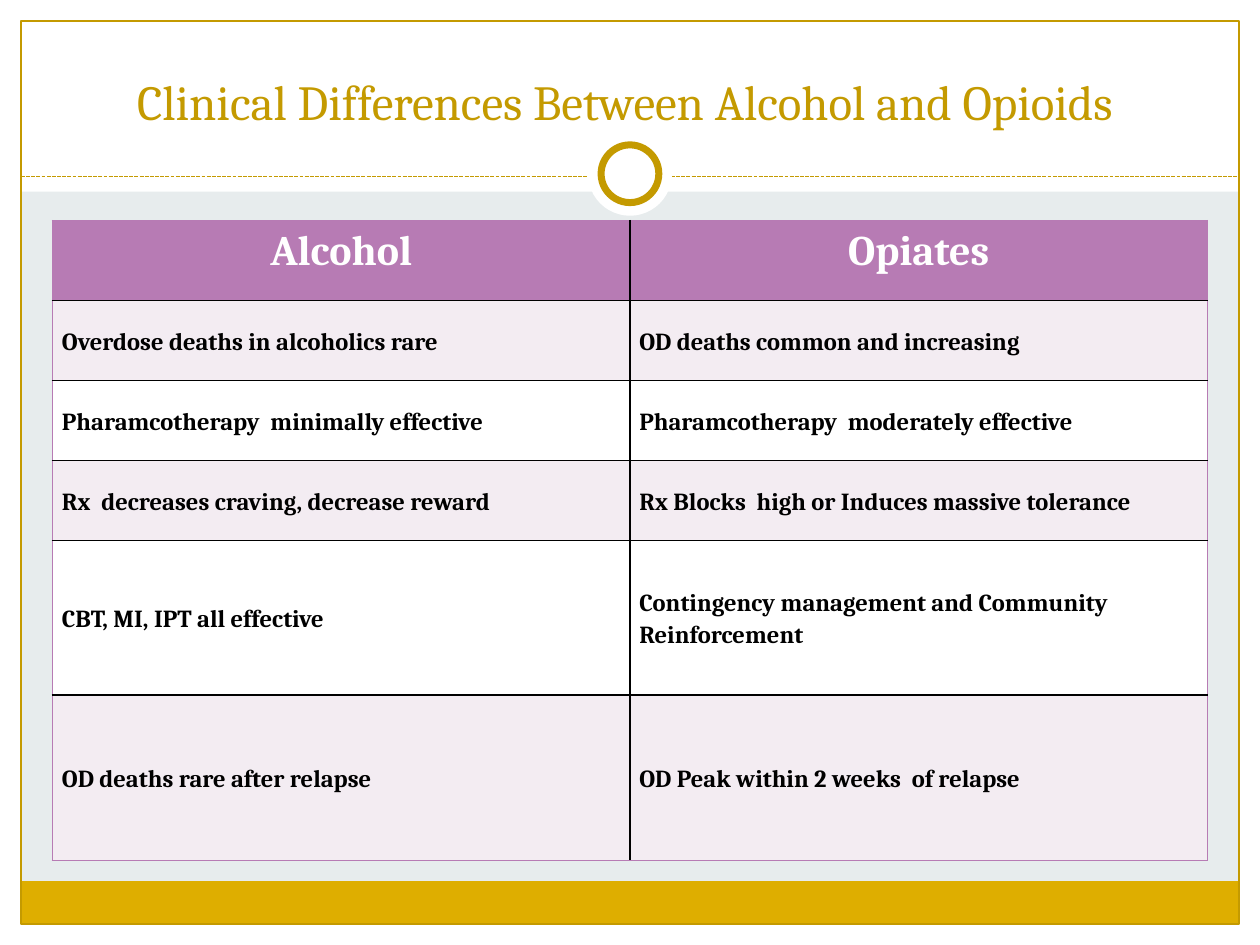
import pptx
import pptx.util
import pptx.dml.color
import pptx.enum.dml
import pptx.enum.shapes
import pptx.enum.text
import pptx.oxml
import pptx.oxml.ns
from dataclasses import dataclass

Pt = pptx.util.Pt
Shape = pptx.enum.shapes.MSO_SHAPE
Align = pptx.enum.text.PP_ALIGN
Anchor = pptx.enum.text.MSO_ANCHOR

# Content
TITLE = "Clinical Differences Between Alcohol and Opioids"
HEADS = ("Alcohol", "Opiates")
ROWS = [
    ("Overdose deaths in alcoholics rare", "OD deaths common and increasing"),
    ("Pharamcotherapy  minimally effective", "Pharamcotherapy  moderately effective"),
    ("Rx  decreases craving, decrease reward",
     "Rx Blocks  high or Induces massive tolerance"),
    ("CBT, MI, IPT all effective",
     "Contingency management and Community Reinforcement"),
    ("OD deaths rare after relapse", "OD Peak within 2 weeks  of relapse"),
]


# Theme
@dataclass(frozen=True)
class Theme:
    font: str = "Cambria"
    back: str = "E7ECED"
    white: str = "FFFFFF"
    black: str = "000000"
    gold: str = "C49A00"
    foot: str = "DEAE00"
    plum: str = "B77BB4"
    pale: str = "F3ECF2"
    title: int = 28
    head: int = 24
    body: int = 14


T = Theme()

# Layout, in points
WIDE, HIGH = 720, 540
EDGE = 12
BAND = 109.5
RULE = 100.8
FOOT = 24.5
RING = (343.5, 82.8, 33)
HALO = 7.5
GRID = (30, 126, 660)
HEIGHTS = [45.72] * 4 + [88.4, 94.5]


def rgb(code):
    return pptx.dml.color.RGBColor.from_string(code)


def write(frame, words, size=T.body, color=T.black, bold=False,
          align=Align.LEFT, space=None):
    frame.word_wrap = True
    para = frame.paragraphs[0]
    para.alignment = align
    para.line_spacing = space
    run = para.add_run()
    run.text = words
    font = run.font
    font.name, font.size, font.bold = T.font, Pt(size), bold
    font.color.rgb = rgb(color)


def draw(slide, kind, box, fill=None, line=None, width=0.75):
    part = slide.shapes.add_shape(kind, *map(Pt, box))
    part.shadow.inherit = False
    if fill:
        part.fill.solid()
        part.fill.fore_color.rgb = rgb(fill)
    else:
        part.fill.background()
    if line:
        part.line.color.rgb = rgb(line)
        part.line.width = Pt(width)
    else:
        part.line.fill.background()


def border(cell, sides):
    props = cell._tc.get_or_add_tcPr()
    space = pptx.oxml.ns.nsdecls("a")
    for spot, (side, color) in enumerate(sides.items()):
        props.insert(spot, pptx.oxml.parse_xml(
            f'<a:ln{side} {space} w="12700"><a:solidFill>'
            f'<a:srgbClr val="{color}"/></a:solidFill></a:ln{side}>'))


def frame(slide):
    # White margins, foot band and outline
    for box in ((0, HIGH - EDGE, WIDE, EDGE), (0, 0, WIDE, BAND),
                (0, 0, EDGE, HIGH), (WIDE - EDGE, 0, EDGE, HIGH)):
        draw(slide, Shape.RECTANGLE, box, T.white)
    inner = WIDE - 2 * EDGE
    draw(slide, Shape.RECTANGLE, (EDGE, HIGH - EDGE - FOOT, inner, FOOT), T.foot)
    draw(slide, Shape.RECTANGLE, (EDGE, EDGE, inner, HIGH - 2 * EDGE), line=T.gold)

    # Dashed rule
    rule = slide.shapes.add_connector(
        pptx.enum.shapes.MSO_CONNECTOR.STRAIGHT,
        Pt(EDGE), Pt(RULE), Pt(WIDE - EDGE), Pt(RULE))
    rule.line.color.rgb = rgb(T.gold)
    rule.line.width = Pt(0.75)
    rule.line.dash_style = pptx.enum.dml.MSO_LINE.SQUARE_DOT
    rule._element.spPr.append(pptx.oxml.parse_xml(
        f'<a:effectLst {pptx.oxml.ns.nsdecls("a")}/>'))

    # Ring on a white halo
    left, top, size = RING
    draw(slide, Shape.OVAL,
         (left - HALO, top - HALO, size + 2 * HALO, size + 2 * HALO), T.white)
    draw(slide, Shape.OVAL, (left, top, size, size), T.white, T.gold, 4)


def head(slide):
    title = slide.shapes.title
    title.left, title.top, title.width, title.height = map(Pt, (24, 6, 666, 72))
    title.text_frame.auto_size = pptx.enum.text.MSO_AUTO_SIZE.NONE
    title.text_frame.vertical_anchor = Anchor.BOTTOM
    write(title.text_frame, TITLE, size=T.title, color=T.gold, align=Align.CENTER)
    # Bring the title in front of the white band
    title.element.getparent().append(title.element)


def grid(slide):
    left, top, width = GRID
    data = [HEADS] + ROWS
    last, end = len(data) - 1, len(HEADS) - 1
    table = slide.shapes.add_table(
        len(data), len(HEADS), Pt(left), Pt(top), Pt(width), Pt(sum(HEIGHTS))).table
    for col in table.columns:
        col.width = Pt(width / len(HEADS))
    for r, line in enumerate(data):
        table.rows[r].height = Pt(HEIGHTS[r])
        for c, words in enumerate(line):
            cell = table.cell(r, c)
            cell.margin_left = cell.margin_right = Pt(5.4)
            cell.margin_top = cell.margin_bottom = 0
            cell.fill.solid()
            if r == 0:
                cell.fill.fore_color.rgb = rgb(T.plum)
                cell.vertical_anchor = Anchor.TOP
                write(cell.text_frame, words, size=T.head, color=T.white,
                      bold=True, align=Align.CENTER, space=1.15)
            else:
                cell.fill.fore_color.rgb = rgb(T.pale if r % 2 else T.white)
                cell.vertical_anchor = Anchor.MIDDLE
                write(cell.text_frame, words, bold=True, space=1.15)
            # Plum outside, black inside
            outer = {"L": c == 0, "R": c == end, "T": r == 0, "B": r == last}
            border(cell, {side: T.plum if out else T.black
                          for side, out in outer.items()})


def main():
    deck = pptx.Presentation()
    deck.slide_width, deck.slide_height = Pt(WIDE), Pt(HIGH)
    slide = deck.slides.add_slide(deck.slide_layouts[5])
    slide.background.fill.solid()
    slide.background.fill.fore_color.rgb = rgb(T.back)
    frame(slide)
    head(slide)
    grid(slide)
    deck.save("out.pptx")


if __name__ == "__main__":
    main()
